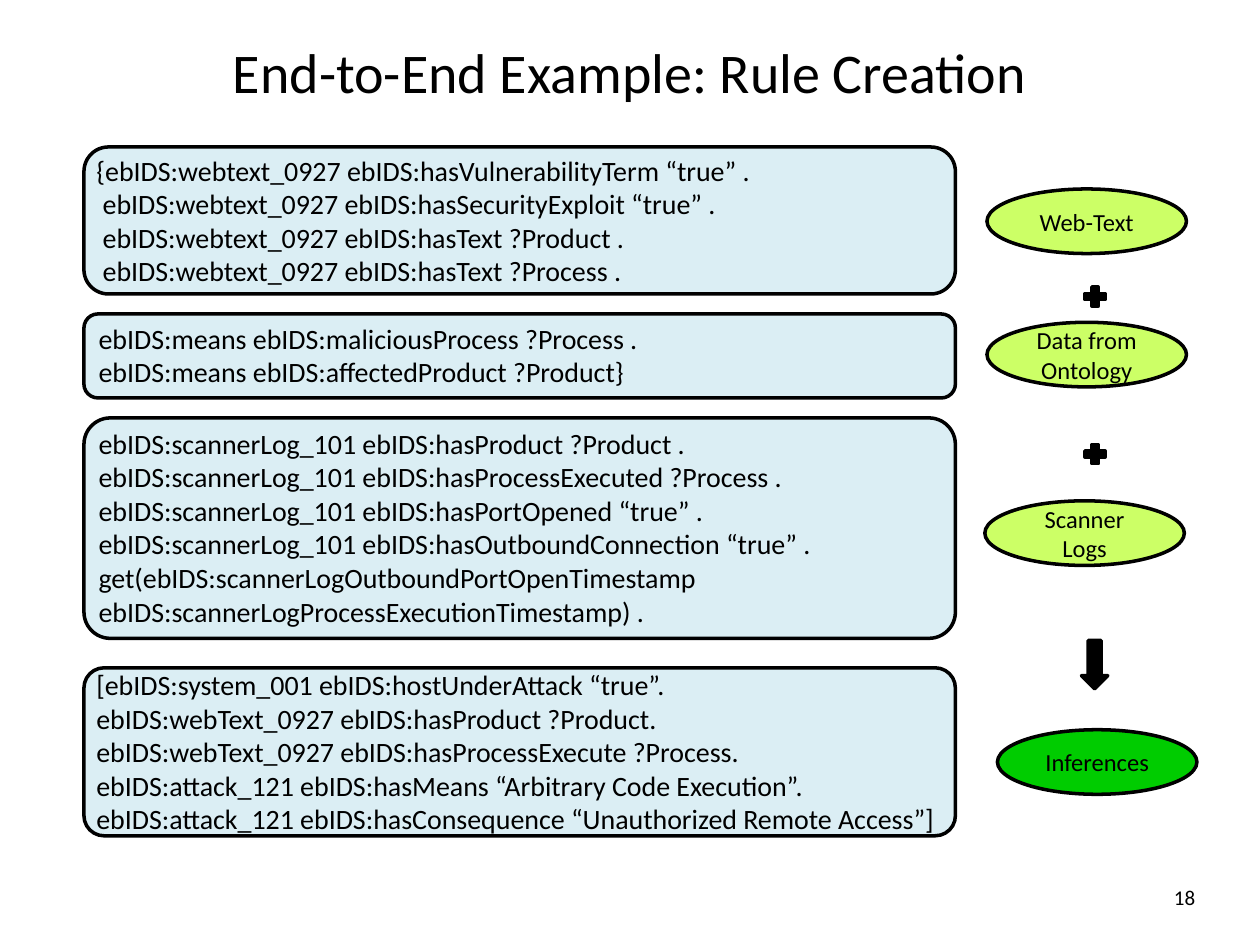
"""Build the rule creation slide on a grid of 120 columns by 90 rows."""
from pptx import Presentation
from pptx.dml.color import RGBColor
from pptx.enum.shapes import MSO_SHAPE
from pptx.enum.text import MSO_ANCHOR, PP_ALIGN
from pptx.util import Inches, Pt

ROUND, OVAL = MSO_SHAPE.ROUNDED_RECTANGLE, MSO_SHAPE.OVAL
PLUS, ARROW = MSO_SHAPE.MATH_PLUS, MSO_SHAPE.DOWN_ARROW
LEFT, MID, RIGHT = PP_ALIGN.LEFT, PP_ALIGN.CENTER, PP_ALIGN.RIGHT
TOP, CENTER = MSO_ANCHOR.TOP, MSO_ANCHOR.MIDDLE
BLACK, PALE, LIME, GREEN = "000000", "DBEEF4", "CCFF66", "00CC00"

deck = Presentation()
deck.slide_width, deck.slide_height = Inches(10), Inches(7.5)
slide = deck.slides.add_slide(deck.slide_layouts[6])
cell = deck.slide_width / 120


def draw(kind, spot, fill):
    shape = slide.shapes.add_shape(kind, *[int(n * cell) for n in spot])
    shape.shadow.inherit = False
    shape.fill.solid()
    shape.fill.fore_color.rgb = RGBColor.from_string(fill)
    shape.line.color.rgb = RGBColor.from_string(BLACK)
    shape.line.width = Pt(2)
    return shape


def write(lines, size, align=LEFT, anchor=TOP, spot=None, shape=None):
    box = shape or slide.shapes.add_textbox(*[int(n * cell) for n in spot])
    frame = box.text_frame
    frame.word_wrap = True
    frame.vertical_anchor = anchor
    frame.text = "\n".join(lines)
    for par in frame.paragraphs:
        par.alignment = align
        par.font.name, par.font.size = "Calibri", Pt(size)
        par.font.color.rgb = RGBColor.from_string(BLACK)


steps = [
    ("Web-Text", 94, 18, LIME, 14, 14, 0.167, (8, 14, 75, 20.6), [
        "{ebIDS:webtext_0927 ebIDS:hasVulnerabilityTerm “true” .",
        " ebIDS:webtext_0927 ebIDS:hasSecurityExploit “true” .",
        " ebIDS:webtext_0927 ebIDS:hasText ?Product .",
        " ebIDS:webtext_0927 ebIDS:hasText ?Process ."]),
    ("Data from Ontology", 94, 30.7, LIME, 29.9, 8, 0.167, (8.2, 30, 75, 10.9), [
        "ebIDS:means ebIDS:maliciousProcess ?Process .",
        "ebIDS:means ebIDS:affectedProduct ?Product}"]),
    ("Scanner Logs", 93.8, 47.7, LIME, 39.8, 21, 0.12, (8.2, 40, 75, 23.9), [
        "ebIDS:scannerLog_101 ebIDS:hasProduct ?Product .",
        "ebIDS:scannerLog_101 ebIDS:hasProcessExecuted ?Process .",
        "ebIDS:scannerLog_101 ebIDS:hasPortOpened “true” .",
        "ebIDS:scannerLog_101 ebIDS:hasOutboundConnection “true” .",
        "get(ebIDS:scannerLogOutboundPortOpenTimestamp",
        "ebIDS:scannerLogProcessExecutionTimestamp) ."]),
    ("Inferences", 95, 69.5, GREEN, 63.6, 16, 0.12, (8, 63, 85, 20.6), [
        "[ebIDS:system_001 ebIDS:hostUnderAttack “true”.",
        "ebIDS:webText_0927 ebIDS:hasProduct ?Product.",
        "ebIDS:webText_0927 ebIDS:hasProcessExecute ?Process.",
        "ebIDS:attack_121 ebIDS:hasMeans “Arbitrary Code Execution”.",
        "ebIDS:attack_121 ebIDS:hasConsequence “Unauthorized Remote Access”]"]),
]
for name, col, row, tint, top, high, curve, spot, rules in steps:
    panel = draw(ROUND, (8, top, 83, high), PALE)
    panel.adjustments[0] = curve
    label = draw(OVAL, (col, row, 19, 6.15), tint)
    write([name], 14, MID, CENTER, shape=label)
    write(rules, 16, spot=spot)

for kind, row, wide, high in [(PLUS, 27, 2.6, 2.5), (PLUS, 42, 2.6, 2.5),
                              (ARROW, 61, 2.5, 4.6)]:
    draw(kind, (103, row, wide, high), BLACK)

write(["End-to-End Example: Rule Creation"], 32, MID, spot=(0, 3, 120, 7.7))
write(["18"], 12, RIGHT, CENTER, spot=(87, 83, 28, 4.8))

deck.save("out.pptx")
